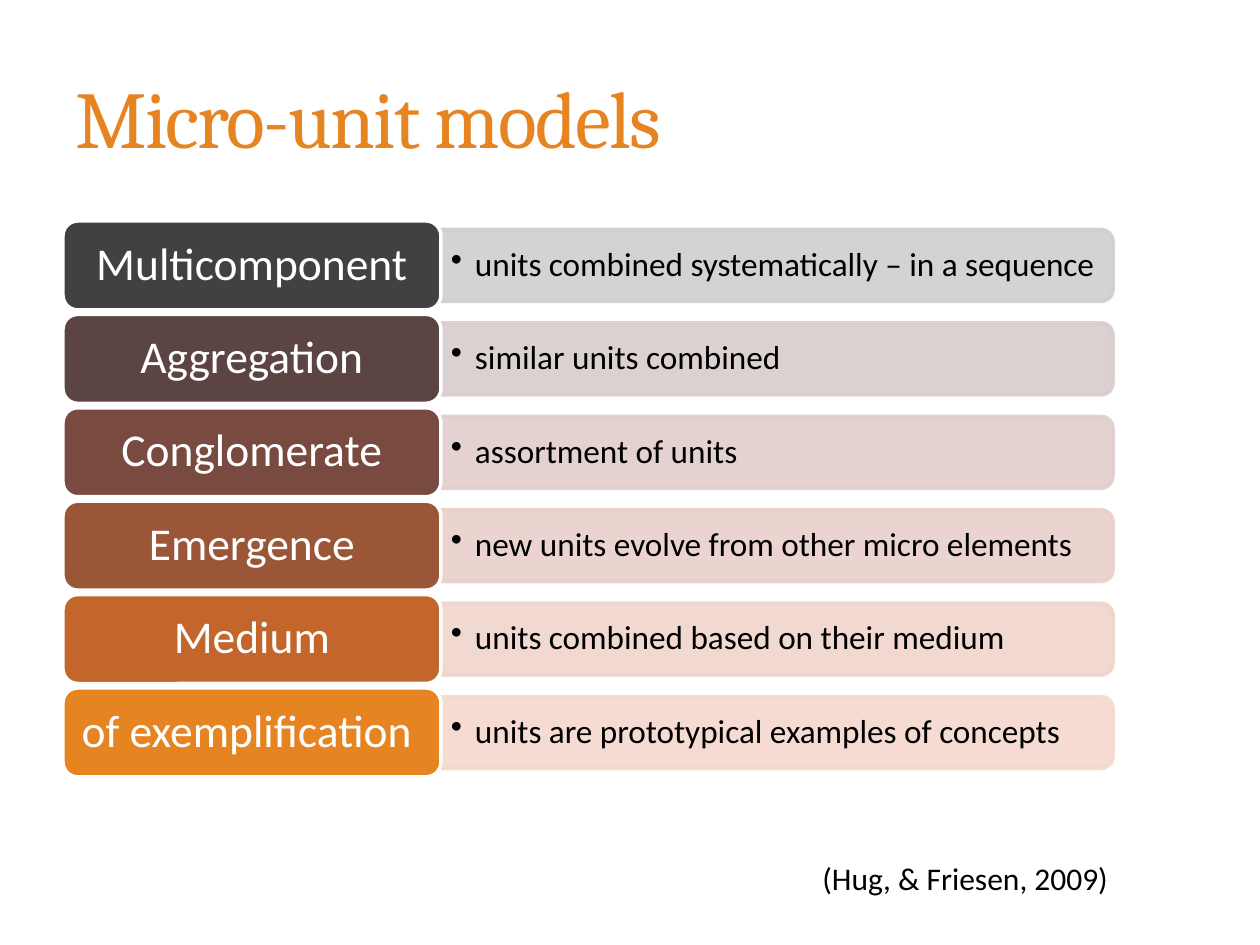
from pptx import Presentation
from pptx.dml.color import RGBColor
from pptx.enum.shapes import MSO_SHAPE as SHAPE
from pptx.enum.text import MSO_ANCHOR as ANCHOR, MSO_AUTO_SIZE as AUTO_SIZE, PP_ALIGN as ALIGN
from pptx.oxml.ns import qn
from pptx.util import Emu, Pt
from lxml.etree import SubElement

EMU_PER_PX = 914400 / 126
BODY_FONT, TITLE_FONT = "Calibri", "Cambria"
BLACK = RGBColor(0x00, 0x00, 0x00)
WHITE = RGBColor(0xFF, 0xFF, 0xFF)
ORANGE = RGBColor(0xE6, 0x84, 0x22)

# name, description, label colour, bar colour
MODELS = [
    ("Multicomponent", "units combined systematically – in a sequence",
     RGBColor(0x41, 0x41, 0x41), RGBColor(0xCF, 0xCF, 0xCF)),
    ("Aggregation", "similar units combined",
     RGBColor(0x5B, 0x44, 0x42), RGBColor(0xD8, 0xCD, 0xCC)),
    ("Conglomerate", "assortment of units",
     RGBColor(0x79, 0x4A, 0x3F), RGBColor(0xE1, 0xCE, 0xCB)),
    ("Emergence", "new units evolve from other micro elements",
     RGBColor(0x9B, 0x56, 0x37), RGBColor(0xE9, 0xD0, 0xCB)),
    ("Medium", "units combined based on their medium",
     RGBColor(0xC2, 0x66, 0x2B), RGBColor(0xF0, 0xD4, 0xCB)),
    ("of exemplification ", "units are prototypical examples of concepts",
     ORANGE, RGBColor(0xF5, 0xD8, 0xCD)),
]

LEFT, FIRST_TOP, LAST_TOP = 63, 221, 688
LABEL_W, LABEL_H = 378, 89
BAR_W, BAR_H = 672, 72
DESC_W, DESC_H = 669, 64


def px(n):
    return Emu(round(n * EMU_PER_PX))


def box(left, top, width, height):
    return [px(n) for n in (left, top, width, height)]


def set_insets(tf, side, edge):
    tf.margin_left = tf.margin_right = px(side)
    tf.margin_top = tf.margin_bottom = px(edge)


def add_run(p, text, size, color, font=BODY_FONT):
    r = p.add_run()
    r.text = text
    r.font.name, r.font.size = font, Pt(size)
    r.font.color.rgb = color
    return r


def add_shape(s, kind, area, fill, line):
    sp = s.shapes.add_shape(kind, *area)
    sp.shadow.inherit = False
    sp.fill.solid()
    sp.fill.fore_color.rgb = fill
    sp.line.color.rgb = line
    sp.line.width = Pt(2)
    return sp


def add_bar(s, left, middle, color):
    """Add a translucent bar, turned so that its round corners face right."""
    center = left + BAR_W / 2
    area = box(center - BAR_H / 2, middle - BAR_W / 2, BAR_H, BAR_W)
    sp = add_shape(s, SHAPE.ROUND_2_SAME_RECTANGLE, area, color, color)
    sp.rotation = 90
    for clr in sp.fill._xPr.iter(qn("a:srgbClr")):
        SubElement(clr, qn("a:alpha"), val="90000")


def add_description(s, left, middle, text):
    tf = s.shapes.add_textbox(*box(left, middle - DESC_H / 2, DESC_W, DESC_H)).text_frame
    tf.word_wrap = True
    tf.vertical_anchor = ANCHOR.MIDDLE
    set_insets(tf, 10, 5)
    p = tf.paragraphs[0]
    p.level = 1
    p.line_spacing = 0.9
    pPr = p._p.get_or_add_pPr()
    pPr.set("marL", str(px(24)))
    pPr.set("indent", str(px(-24)))
    SubElement(pPr, qn("a:buChar"), char="•")
    add_run(p, text, 19, BLACK)


def add_label(s, top, text, color):
    sp = add_shape(s, SHAPE.ROUNDED_RECTANGLE, box(LEFT, top, LABEL_W, LABEL_H), color, WHITE)
    tf = sp.text_frame
    tf.word_wrap = True
    tf.vertical_anchor = ANCHOR.MIDDLE
    set_insets(tf, 14, 6)
    p = tf.paragraphs[0]
    p.alignment = ALIGN.CENTER
    p.line_spacing = 0.9
    add_run(p, text, 26, WHITE)


def add_title(s, text):
    sp = s.shapes.title
    sp.left, sp.top, sp.width, sp.height = box(LEFT, 38, 1050, 157)
    tf = sp.text_frame
    tf.auto_size = AUTO_SIZE.NONE
    tf.vertical_anchor = ANCHOR.MIDDLE
    p = tf.paragraphs[0]
    p.alignment = ALIGN.LEFT
    r = add_run(p, text, 46, ORANGE, TITLE_FONT)
    r.font._element.set("spc", "-100")


def add_citation(s, text):
    tf = s.shapes.add_textbox(*box(810, 853, 350, 89)).text_frame
    tf.word_wrap = True
    add_run(tf.paragraphs[0], text, 18, BLACK)


def main():
    prs = Presentation()
    prs.slide_width, prs.slide_height = px(1260), px(945)
    s = prs.slides.add_slide(prs.slide_layouts[5])
    add_title(s, "Micro-unit models")
    pitch = (LAST_TOP - FIRST_TOP) / (len(MODELS) - 1)
    for i, (name, description, label_color, bar_color) in enumerate(MODELS):
        top = FIRST_TOP + i * pitch
        middle = top + LABEL_H / 2
        add_bar(s, LEFT + LABEL_W, middle, bar_color)
        add_description(s, LEFT + LABEL_W, middle, description)
        add_label(s, top, name, label_color)
    add_citation(s, "(Hug, & Friesen, 2009)")
    prs.save("out.pptx")


if __name__ == "__main__":
    main()
